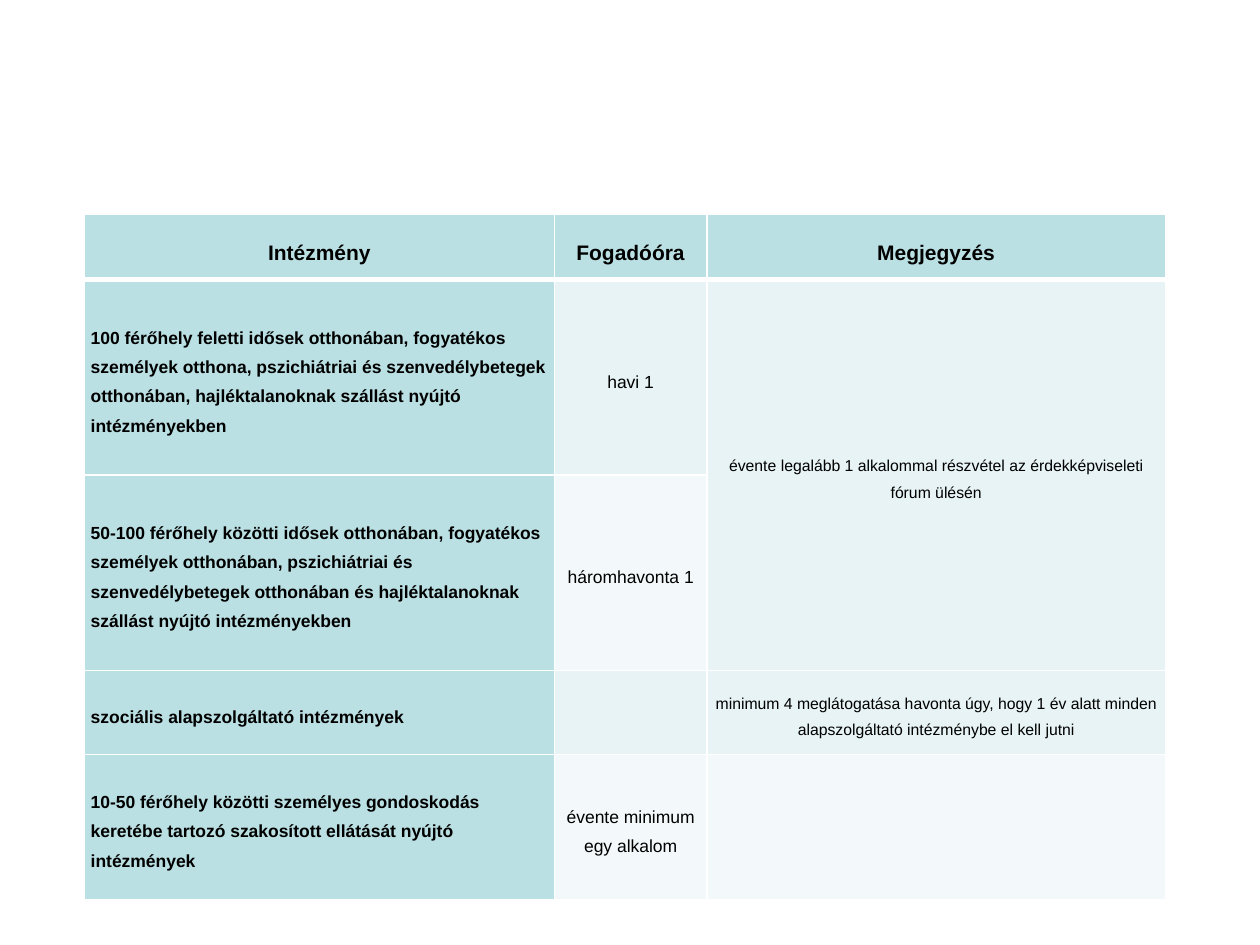
import pptx
import pptx.util
import pptx.dml.color
import pptx.enum.text
import pptx.oxml
import pptx.oxml.ns

Inches = pptx.util.Inches
Pt = pptx.util.Pt
RGBColor = pptx.dml.color.RGBColor
Align = pptx.enum.text.PP_ALIGN
Anchor = pptx.enum.text.MSO_ANCHOR

TEAL = RGBColor(0xBA, 0xE0, 0xE3)
LIGHT = RGBColor(0xE7, 0xF3, 0xF4)
PALE = RGBColor(0xF3, 0xF9, 0xFA)
BLACK = RGBColor(0, 0, 0)
WHITE = RGBColor(0xFF, 0xFF, 0xFF)

ROWS = [
    ("Intézmény", "Fogadóóra", "Megjegyzés"),
    ("100 férőhely feletti idősek otthonában, fogyatékos személyek otthona, "
     "pszichiátriai és szenvedélybetegek otthonában, hajléktalanoknak szállást "
     "nyújtó intézményekben",
     "havi 1",
     "évente legalább 1 alkalommal részvétel az érdekképviseleti fórum ülésén"),
    ("50-100 férőhely közötti idősek otthonában, fogyatékos személyek otthonában, "
     "pszichiátriai és szenvedélybetegek otthonában és hajléktalanoknak szállást "
     "nyújtó intézményekben",
     "háromhavonta 1", ""),
    ("szociális alapszolgáltató intézmények", "",
     "minimum 4 meglátogatása havonta úgy, hogy 1 év alatt minden "
     "alapszolgáltató intézménybe el kell jutni"),
    ("10-50 férőhely közötti személyes gondoskodás keretébe tartozó szakosított "
     "ellátását nyújtó intézmények",
     "évente minimum egy alkalom", ""),
]
WIDTHS = [3.73, 1.21, 3.64]
HEIGHTS = [0.52, 1.55, 1.55, 0.67, 1.15]
SIZES = [10, 10, 9]
CELL = {
    "vertical_anchor": Anchor.MIDDLE,
    "margin_left": Inches(0.05),
    "margin_right": Inches(0.05),
    "margin_top": 0,
    "margin_bottom": 0,
}


def assign(item, values):
    for name, value in values.items():
        setattr(item, name, value)


def border(cell, widths):
    props = cell._tc.get_or_add_tcPr()
    for side, width in zip("LRTB", widths):
        props.append(pptx.oxml.parse_xml(
            f'<a:ln{side} {pptx.oxml.ns.nsdecls("a")} w="{Pt(width)}">'
            f'<a:solidFill><a:srgbClr val="{WHITE}"/></a:solidFill></a:ln{side}>'))


def style(cell, text, row, col):
    head = row == 0
    side = col == 0
    assign(cell, CELL)
    border(cell, (1, 1, 3 if row == 1 else 1, 3 if head else 1))
    cell.fill.solid()
    cell.fill.fore_color.rgb = TEAL if head or side else LIGHT if row % 2 else PALE
    cell.text = text
    para = cell.text_frame.paragraphs[0]
    assign(para, {
        "alignment": Align.LEFT if side and not head else Align.CENTER,
        "line_spacing": 1.5,
    })
    assign(para.font, {
        "name": "Arial",
        "size": Pt(12 if head else SIZES[col]),
        "bold": head or side,
    })
    para.font.color.rgb = BLACK


def main():
    deck = pptx.Presentation()
    assign(deck, {"slide_width": Inches(10), "slide_height": Inches(7.5)})
    slide = deck.slides.add_slide(deck.slide_layouts[6])
    table = slide.shapes.add_table(
        len(ROWS), len(WIDTHS), Inches(0.67), Inches(1.7),
        Inches(sum(WIDTHS)), Inches(sum(HEIGHTS))).table
    for col, width in zip(table.columns, WIDTHS):
        col.width = Inches(width)
    for row, height in zip(table.rows, HEIGHTS):
        row.height = Inches(height)
    for row, texts in enumerate(ROWS):
        for col, text in enumerate(texts):
            style(table.cell(row, col), text, row, col)
    table.cell(1, 2).merge(table.cell(2, 2))
    deck.save("out.pptx")


if __name__ == "__main__":
    main()
